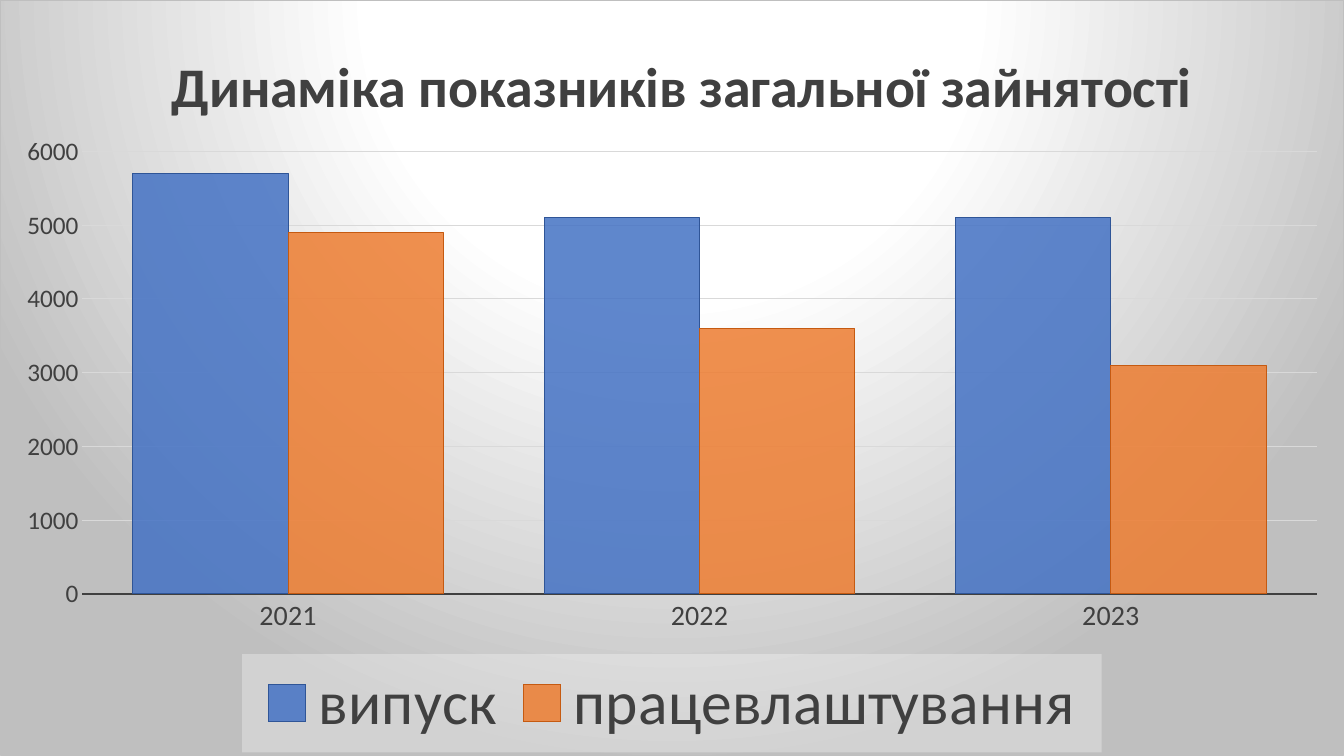
import lxml.etree
import pptx
import pptx.chart.data
import pptx.dml.color
import pptx.enum.chart
import pptx.oxml
import pptx.oxml.ns
import pptx.util

RGBColor = pptx.dml.color.RGBColor
Cm, Pt = pptx.util.Cm, pptx.util.Pt
qn, nsdecls = pptx.oxml.ns.qn, pptx.oxml.ns.nsdecls

WIDTH, HEIGHT = Cm(33.87), Cm(19.05)
FONT = "Calibri"
TEXT = RGBColor(0x40, 0x40, 0x40)
GRID = RGBColor(0xD9, 0xD9, 0xD9)
WHITE = RGBColor(0xFF, 0xFF, 0xFF)
GREY = RGBColor(0xBF, 0xBF, 0xBF)
BLUE = RGBColor(0x44, 0x72, 0xC4)
DARK_BLUE = RGBColor(0x2F, 0x55, 0x97)
ORANGE = RGBColor(0xED, 0x7D, 0x31)
DARK_ORANGE = RGBColor(0xC5, 0x5A, 0x11)

TITLE = "Динаміка показників загальної зайнятості"
YEARS = ["2021", "2022", "2023"]
SERIES = [
    ("випуск", (5700, 5100, 5100), BLUE, DARK_BLUE),
    ("працевлаштування", (4900, 3600, 3100), ORANGE, DARK_ORANGE),
]


def style_font(font, size, color=TEXT, bold=False):
    """Apply the slide's typeface to a font."""
    font.name, font.size, font.bold = FONT, Pt(size), bold
    font.color.rgb = color


def write_text(tf, text, **fmt):
    """Put one formatted run into a text frame."""
    r = tf.paragraphs[0].add_run()
    r.text = text
    style_font(r.font, **fmt)


def style_line(line, color, width):
    """Set the colour and width in points of a line."""
    line.color.rgb = color
    line.width = Pt(width)


def place(element, index, x, y, w=None, h=None, inner=False):
    """Give a chart part a manual layout in fractions of the chart."""
    for old in element.findall(qn("c:layout")):
        element.remove(old)
    values = [("layoutTarget", "inner")] if inner else []
    values += [("xMode", "edge"), ("yMode", "edge"), ("x", x), ("y", y)]
    if w is not None:
        values += [("w", w), ("h", h)]
    tags = "".join(f'<c:{tag} val="{value}"/>' for tag, value in values)
    element.insert(index, pptx.oxml.parse_xml(
        f'<c:layout {nsdecls("c")}><c:manualLayout>{tags}</c:manualLayout></c:layout>'))


def shape_properties(content):
    """Build a chart shape-properties element."""
    return pptx.oxml.parse_xml(f'<c:spPr {nsdecls("c", "a")}>{content}</c:spPr>')


def add_background(chart):
    """Fill the chart area with a radial gradient and a thin border."""
    stops = "".join(
        f'<a:gs pos="{pos * 1000}"><a:srgbClr val="{color}"/></a:gs>'
        for pos, color in ((0, WHITE), (39, WHITE), (100, GREY)))
    chart.element.find(qn("c:chart")).addnext(shape_properties(
        f'<a:gradFill><a:gsLst>{stops}</a:gsLst><a:path path="circle">'
        '<a:fillToRect l="50000" t="-80000" r="50000" b="180000"/></a:path></a:gradFill>'
        f'<a:ln w="{Pt(0.75)}"><a:solidFill><a:srgbClr val="{GREY}"/></a:solidFill></a:ln>'))


def format_series(chart):
    """Colour the columns and make them slightly transparent."""
    plot = chart.plots[0]
    plot.gap_width, plot.overlap, plot.vary_by_categories = 65, 0, False
    for s, (_, _, color, edge) in zip(plot.series, SERIES):
        s.format.fill.solid()
        s.format.fill.fore_color.rgb = color
        style_line(s.format.line, edge, 0.75)
    for ser in chart.element.iter(qn("c:ser")):
        fill = ser.find(f'{qn("c:spPr")}/{qn("a:solidFill")}/{qn("a:srgbClr")}')
        lxml.etree.SubElement(fill, qn("a:alpha"), val="85000")


def format_axes(chart):
    """Format the year axis, the value axis and the gridlines."""
    tick = pptx.enum.chart.XL_TICK_MARK.NONE
    for axis, size in ((chart.category_axis, 20), (chart.value_axis, 18)):
        axis.major_tick_mark = axis.minor_tick_mark = tick
        style_font(axis.tick_labels.font, size)
    style_line(chart.category_axis.format.line, TEXT, 1.5)
    axis = chart.value_axis
    axis.minimum_scale, axis.maximum_scale, axis.major_unit = 0, 6000, 1000
    axis.format.line.fill.background()
    axis.has_major_gridlines = True
    style_line(axis.major_gridlines.format.line, GRID, 0.75)


def add_legend(chart):
    """Place the legend on a translucent panel at the bottom."""
    chart.has_legend = True
    legend = chart.legend
    legend.position = pptx.enum.chart.XL_LEGEND_POSITION.BOTTOM
    legend.include_in_layout = False
    style_font(legend.font, 44)
    element = legend.element if hasattr(legend, "element") else legend._element
    place(element, 1, 0.18, 0.87, 0.64, 0.13)
    element.find(qn("c:overlay")).addnext(shape_properties(
        f'<a:solidFill><a:srgbClr val="{WHITE}"><a:alpha val="30000"/>'
        '</a:srgbClr></a:solidFill><a:ln><a:noFill/></a:ln>'))


def add_employment_chart(s, left, top, width, height):
    """Add the titled employment chart in the given box."""
    data = pptx.chart.data.CategoryChartData()
    data.categories = YEARS
    for name, values, _, _ in SERIES:
        data.add_series(name, values)
    kind = pptx.enum.chart.XL_CHART_TYPE.COLUMN_CLUSTERED
    chart = s.shapes.add_chart(kind, left, top, width, height, data).chart
    style_font(chart.font, 10)
    chart.has_title = True
    write_text(chart.chart_title.text_frame, TITLE, size=40, bold=True)
    chart.chart_title.include_in_layout = False
    format_series(chart)
    format_axes(chart)
    add_legend(chart)
    add_background(chart)
    place(next(chart.element.iter(qn("c:title"))), 1, 0.12, 0.05)
    place(next(chart.element.iter(qn("c:plotArea"))), 0,
          0.061, 0.2, 0.919, 0.586, inner=True)


def main():
    """Build and save the presentation."""
    prs = pptx.Presentation()
    prs.slide_width, prs.slide_height = WIDTH, HEIGHT
    s = prs.slides.add_slide(prs.slide_layouts[6])
    add_employment_chart(s, 0, 0, WIDTH, HEIGHT)
    prs.save("out.pptx")


if __name__ == "__main__":
    main()
